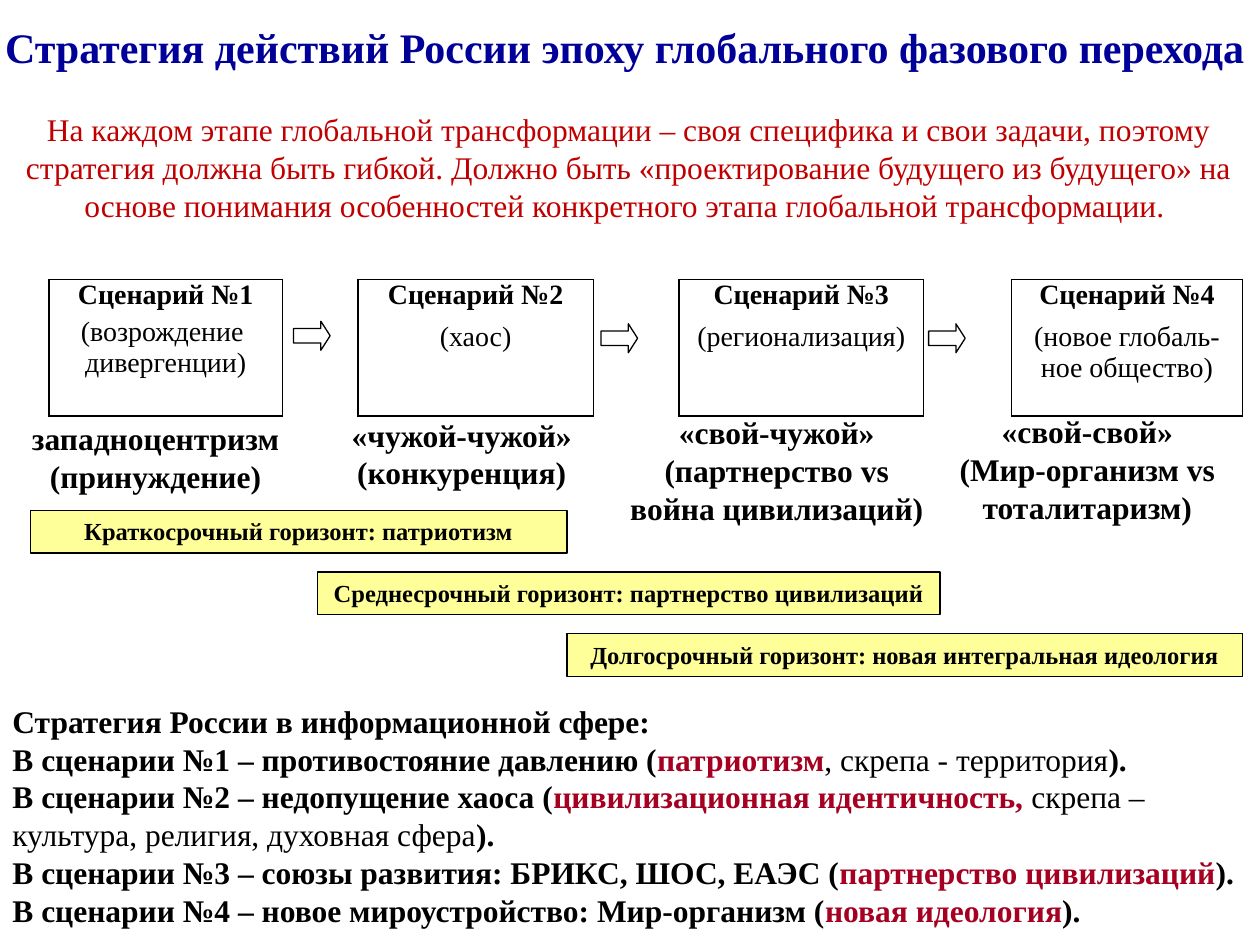
from lxml import etree
from pptx import Presentation
from pptx.dml.color import RGBColor
from pptx.enum.shapes import MSO_SHAPE
from pptx.enum.text import MSO_ANCHOR, MSO_AUTO_SIZE, PP_ALIGN
from pptx.oxml.ns import qn
from pptx.util import Inches, Pt

RECT, ARROW = MSO_SHAPE.RECTANGLE, MSO_SHAPE.RIGHT_ARROW
CENTER, LEFT = PP_ALIGN.CENTER, PP_ALIGN.LEFT
TOP, MIDDLE = MSO_ANCHOR.TOP, MSO_ANCHOR.MIDDLE
GROW = MSO_AUTO_SIZE.SHAPE_TO_FIT_TEXT
FONT = "Times New Roman"
BLACK, WHITE, NAVY, RED = "000000", "FFFFFF", "000099", "C00000"
CRIMSON, YELLOW = "A50021", "FFFF99"

COLUMNS = [1.85, 0.6, 1.87, 0.68, 1.94, 0.7, 1.83]
SCENARIOS = [
    (["Сценарий №1", "(возрождение ", "дивергенции)"], 0),
    (["Сценарий №2", "(хаос)"], 3),
    (["Сценарий №3", "(регионализация)"], 3),
    (["Сценарий №4", "(новое глобаль-ное общество)"], 3),
]
ARROWS = [(2.33, 2.55), (4.77, 2.57), (7.37, 2.57)]
RELATIONS = [
    ((0, 3.28, 2.47, 0.7), ["западноцентризм", "(принуждение)"]),
    ((2.6, 3.25, 2.13, 0.7), ["«чужой-чужой»", "(конкуренция)"]),
    ((4.86, 3.23, 2.61, 1.01), ["«свой-чужой»", "(партнерство vs война цивилизаций)"]),
    ((7.5, 3.22, 2.26, 1.01), ["«свой-свой»", "(Мир-организм vs тоталитаризм)"]),
]
HORIZONS = [
    (0.24, 4.26, "Краткосрочный горизонт: патриотизм"),
    (2.52, 4.94, "Среднесрочный горизонт: партнерство цивилизаций"),
    (4.5, 5.36, "Долгосрочный горизонт: новая интегральная идеология"),
]
TITLE = "Стратегия действий России эпоху глобального фазового перехода "
INTRO = (
    "На каждом этапе глобальной трансформации – своя специфика и свои задачи, "
    "поэтому стратегия должна быть гибкой. Должно быть «проектирование будущего "
    "из будущего» на основе понимания особенностей конкретного этапа глобальной "
    "трансформации. "
)
STRATEGY = [
    ("Стратегия России в информационной сфере:", "", "", ""),
    ("В сценарии №1 – противостояние давлению (", "патриотизм",
     ", скрепа - территория", ")."),
    ("В сценарии №2 – недопущение хаоса (", "цивилизационная идентичность, ",
     "скрепа – культура, религия, духовная сфера", ")."),
    ("В сценарии №3 – союзы развития: БРИКС, ШОС, ЕАЭС (",
     "партнерство цивилизаций", "", ")."),
    ("В сценарии №4 – новое мироустройство: Мир-организм (",
     "новая идеология", "", ")."),
]
STRATEGY_STYLES = [(BLACK, True), (CRIMSON, True), (BLACK, False), (BLACK, True)]


def rgb(value):
    """Return the colour for a hex string."""
    return RGBColor.from_string(value)


def style_run(r, size, color, bold):
    """Set the font of a run."""
    r.font.name, r.font.size, r.font.bold = FONT, Pt(size), bold
    r.font.color.rgb = rgb(color)


def fill_text(tf, lines, size, color=BLACK, bold=True):
    """Write centred paragraphs in one style."""
    tf.text = "\n".join(lines)
    for p in tf.paragraphs:
        p.alignment = CENTER
        for r in p.runs:
            style_run(r, size, color, bold)


def add_text(slide, box, anchor=TOP, inset=(0.1, 0.05)):
    """Add a wrapping text box and return its text frame."""
    tf = slide.shapes.add_textbox(*map(Inches, box)).text_frame
    tf.word_wrap, tf.auto_size, tf.vertical_anchor = True, GROW, anchor
    tf.margin_left = tf.margin_right = Inches(inset[0])
    tf.margin_top = tf.margin_bottom = Inches(inset[1])
    return tf


def add_outlined(slide, kind, box, fill):
    """Add a filled preset shape with a thin black outline."""
    sp = slide.shapes.add_shape(kind, *map(Inches, box))
    sp.shadow.inherit = False
    sp.fill.solid()
    sp.fill.fore_color.rgb = rgb(fill)
    sp.line.color.rgb = rgb(BLACK)
    sp.line.width = Pt(0.75)
    return sp


def set_borders(cell, sides):
    """Draw the named sides of a cell and hide the others."""
    tc_pr = cell._tc.get_or_add_tcPr()
    for side in "LRTB":
        ln = etree.SubElement(tc_pr, qn(f"a:ln{side}"), w=str(Pt(1)))
        if side in sides:
            fill = etree.SubElement(ln, qn("a:solidFill"))
            etree.SubElement(fill, qn("a:srgbClr"), val=BLACK)
        else:
            etree.SubElement(ln, qn("a:noFill"))


def add_scenarios(slide, box):
    """Add the row of scenario cells separated by open gaps."""
    frame = slide.shapes.add_table(1, len(COLUMNS), *map(Inches, box))
    table = frame.table
    table.first_row = table.horz_banding = False
    for i, width in enumerate(COLUMNS):
        table.columns[i].width = Inches(width)
        cell = table.cell(0, i)
        is_gap = i % 2 == 1
        set_borders(cell, "LR" if is_gap else "LRTB")
        cell.fill.background()
        cell.margin_left = cell.margin_right = Inches(0.07)
        cell.margin_top = cell.margin_bottom = 0
        if is_gap:
            continue
        lines, spacing = SCENARIOS[i // 2]
        fill_text(cell.text_frame, lines, 16, bold=False)
        for n, p in enumerate(cell.text_frame.paragraphs):
            p.space_before = p.space_after = Pt(spacing if n else 3)
        cell.text_frame.paragraphs[0].runs[0].font.bold = True


def add_arrows(slide, size):
    """Add the arrows between scenarios."""
    for position in ARROWS:
        sp = add_outlined(slide, ARROW, position + size, WHITE)
        sp.adjustments[0], sp.adjustments[1] = 0.5, 0.32


def add_horizons(slide, top, height, step):
    """Add the staircase of planning horizon bars."""
    for i, (left, width, text) in enumerate(HORIZONS):
        sp = add_outlined(slide, RECT, (left, top + i * step, width, height), YELLOW)
        tf = sp.text_frame
        tf.word_wrap, tf.auto_size, tf.vertical_anchor = True, GROW, TOP
        fill_text(tf, [text], 14)


def add_strategy(slide, box):
    """Add the strategy list with highlighted key ideas."""
    tf = add_text(slide, box)
    for i, parts in enumerate(STRATEGY):
        p = tf.add_paragraph() if i else tf.paragraphs[0]
        p.alignment = LEFT
        for text, (color, bold) in zip(parts, STRATEGY_STYLES):
            if text:
                r = p.add_run()
                r.text = text
                style_run(r, 18, color, bold)


def main():
    """Build the slide and save it."""
    prs = Presentation()
    prs.slide_width, prs.slide_height = Inches(10), Inches(7.5)
    slide = prs.slides.add_slide(prs.slide_layouts[6])
    add_scenarios(slide, (0.39, 2.22, 9.47, 1.08))
    add_arrows(slide, (0.29, 0.23))
    title = add_text(slide, (0, 0.13, 10, 0.48), MIDDLE, (0.04, 0.04))
    fill_text(title, [TITLE], 24, NAVY)
    add_strategy(slide, (0, 5.52, 9.99, 1.92))
    for box, lines in RELATIONS:
        fill_text(add_text(slide, box), lines, 18)
    add_horizons(slide, 4.05, 0.34, 0.49)
    intro = add_text(slide, (-0.01, 0.82, 10, 1.01), MIDDLE)
    fill_text(intro, [INTRO], 18, RED, False)
    prs.save("out.pptx")


if __name__ == "__main__":
    main()
